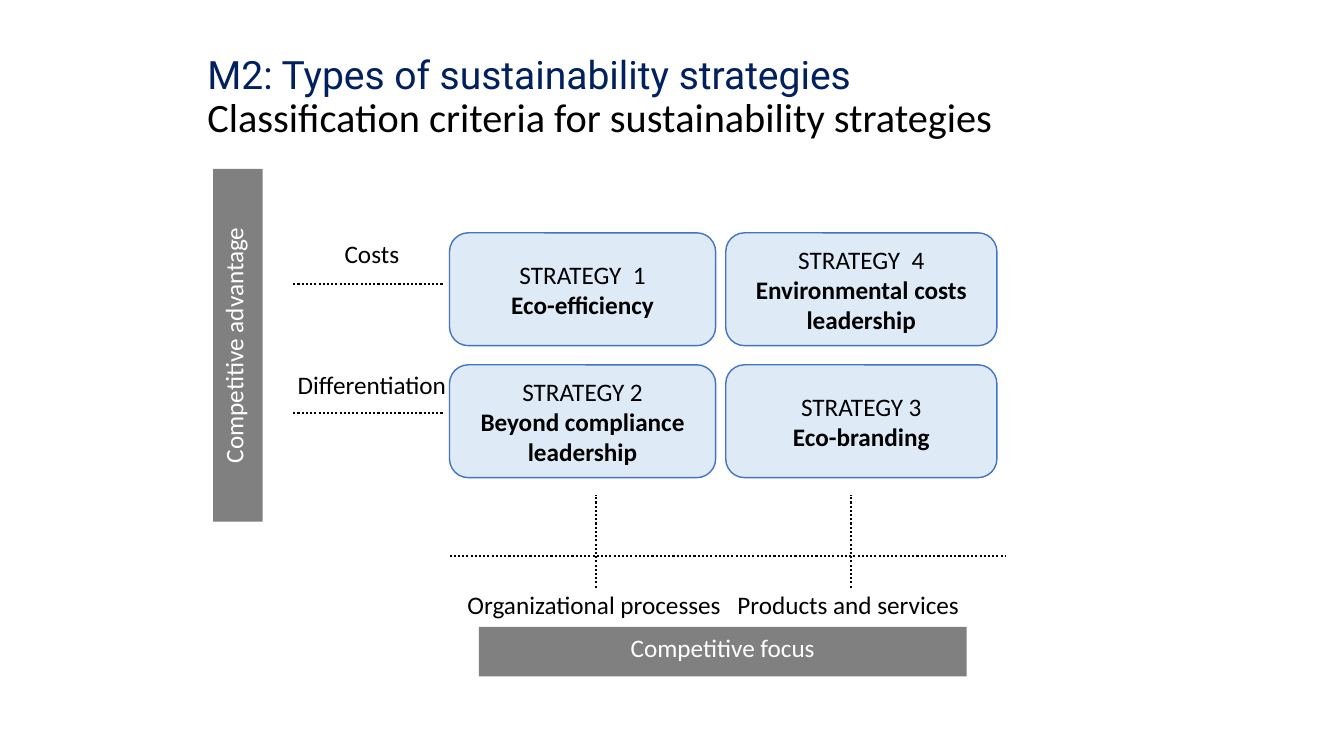
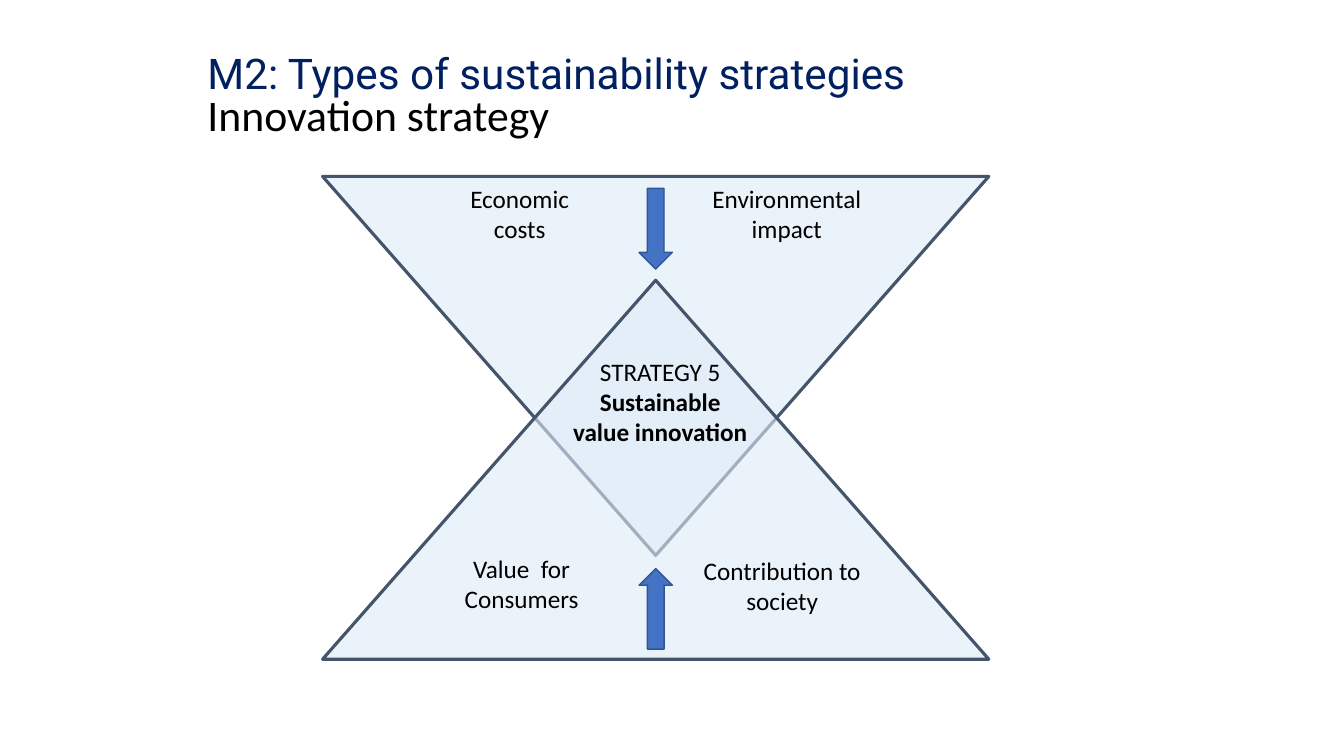
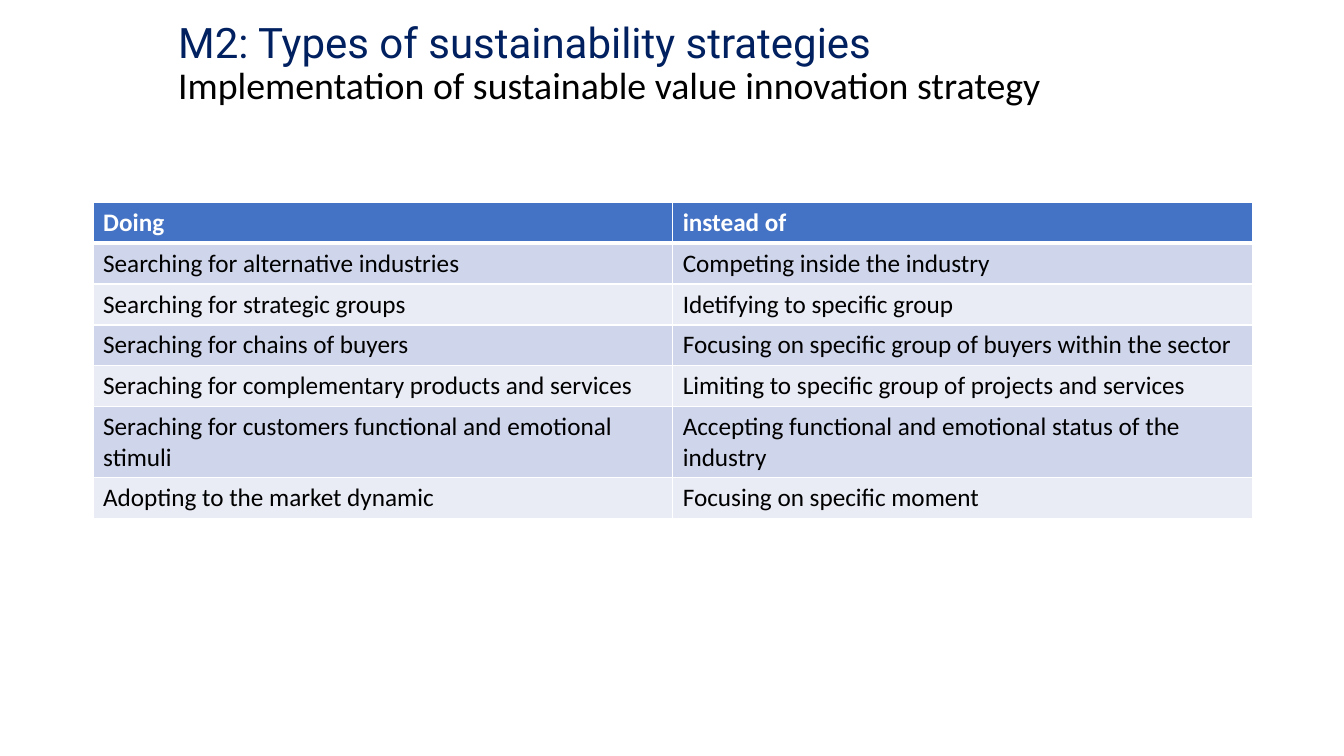
from dataclasses import dataclass
from typing import Sequence

from lxml import etree
from pptx import Presentation
from pptx.dml.color import RGBColor
from pptx.enum.dml import MSO_LINE
from pptx.enum.shapes import MSO_CONNECTOR, MSO_SHAPE
from pptx.enum.text import MSO_ANCHOR, PP_ALIGN
from pptx.oxml.ns import qn
from pptx.util import Pt

ROUNDED, RECTANGLE = MSO_SHAPE.ROUNDED_RECTANGLE, MSO_SHAPE.RECTANGLE
TRIANGLE, DOWN_ARROW = MSO_SHAPE.ISOSCELES_TRIANGLE, MSO_SHAPE.DOWN_ARROW
STRAIGHT, DOTTED = MSO_CONNECTOR.STRAIGHT, MSO_LINE.ROUND_DOT
LEFT, CENTER = PP_ALIGN.LEFT, PP_ALIGN.CENTER
TOP, MIDDLE = MSO_ANCHOR.TOP, MSO_ANCHOR.MIDDLE

BLACK = RGBColor(0x00, 0x00, 0x00)
WHITE = RGBColor(0xFF, 0xFF, 0xFF)
NAVY = RGBColor(0x00, 0x20, 0x60)
SLATE = RGBColor(0x44, 0x54, 0x6A)
GRAY = RGBColor(0x80, 0x80, 0x80)
BLUE = RGBColor(0x44, 0x72, 0xC4)
DARK_BLUE = RGBColor(0x32, 0x54, 0x91)
PALE_BLUE = RGBColor(0xDE, 0xEB, 0xF7)
BANDS = (RGBColor(0xE9, 0xEB, 0xF5), RGBColor(0xCF, 0xD5, 0xEA))

BODY_FONT, TITLE_FONT = "Calibri", "Roboto"
BODY_SIZE = 18
WIDE_MARGINS = (7.2, 3.6)
TIGHT_MARGINS = (1.44, 0.72)
MODULE_TITLE = "M2: Types of sustainability strategies"


@dataclass(frozen=True)
class Box:
    """A rectangle in points."""
    left: float
    top: float
    width: float
    height: float

    def lengths(self) -> tuple:
        return Pt(self.left), Pt(self.top), Pt(self.width), Pt(self.height)


@dataclass(frozen=True)
class Title:
    subtitle: str
    box: Box
    size: float
    subtitle_size: float
    spacing: float = 0.9


@dataclass(frozen=True)
class Label:
    lines: Sequence[str]
    box: Box
    anchor: MSO_ANCHOR = TOP


@dataclass(frozen=True)
class Strategy:
    heading: str
    name: str
    column: int
    row: int


TITLE_BOX = Box(141.1, 35.3, 780.5, 69.8)
TITLES = (
    Title("Classification criteria for sustainability strategies", TITLE_BOX, 27.9, 28.8),
    Title("Innovation strategy", TITLE_BOX, 30.2, 31.2, 0.8),
    Title("Implementation of sustainable value innovation strategy",
          Box(120.2, 1.4, 680.4, 90), 30, 27),
)

STRATEGY_COLUMNS = ((321.1, 190.1), (518.4, 193.7))
STRATEGY_TOP, STRATEGY_HEIGHT, STRATEGY_PITCH = 166.3, 80.6, 94.3
STRATEGIES = (
    Strategy("STRATEGY  1", "Eco-efficiency", 0, 0),
    Strategy("STRATEGY 2", "Beyond compliance leadership", 0, 1),
    Strategy("STRATEGY 3", "Eco-branding", 1, 1),
    Strategy("STRATEGY  4", "Environmental costs leadership", 1, 0),
)
DOTTED_LINES = (
    (209.5, 203, 316.8, 203),
    (209.5, 295.2, 317.5, 295.2),
    (321.1, 397.4, 718.6, 397.4),
    (607.7, 419.8, 607.7, 353.5),
    (425.5, 419.8, 425.5, 353.5),
)
AXIS_LABELS = (
    Label(["Costs"], Box(173.5, 167, 184.3, 36)),
    Label(["Differentiation"], Box(173.5, 260, 184.3, 36)),
    Label(["Organizational processes"], Box(318.2, 414, 212.4, 36), MIDDLE),
    Label(["Products and services"], Box(499.7, 414, 212.4, 36), MIDDLE),
)
VALUE_LABELS = (
    Label(["Economic costs"], Box(312.5, 127.4, 117.4, 64)),
    Label(["Value  for Consumers"], Box(313.9, 391.7, 117.4, 64)),
    Label(["Contribution to society"], Box(488.9, 393.1, 139.7, 64)),
    Label(["Environmental impact"], Box(495.4, 127.4, 133.2, 64)),
    Label(["STRATEGY 5", "Sustainable value innovation"], Box(399.6, 250.6, 144, 99.4)),
)
TABLE_BOX = Box(66.5, 144.5, 828, 204.4)
TABLE_ROWS = (
    ("Doing", "instead of"),
    ("Searching for alternative industries", "Competing inside the industry"),
    ("Searching for strategic groups", "Idetifying to specific group"),
    ("Seraching for chains of buyers", "Focusing on specific group of buyers within the sector"),
    ("Seraching for complementary products and services",
     "Limiting to specific group of projects and services"),
    ("Seraching for customers functional and emotional stimuli",
     "Accepting functional and emotional status of the industry"),
    ("Adopting to the market dynamic", "Focusing on specific moment"),
)


def add_run(paragraph, text: str, *, font: str = BODY_FONT, size: float = BODY_SIZE,
            color: RGBColor = BLACK, bold: bool = False) -> None:
    run = paragraph.add_run()
    run.text = text
    run.font.name = font
    run.font.size = Pt(size)
    run.font.color.rgb = color
    run.font.bold = bold


def set_frame(text_frame, *, anchor: MSO_ANCHOR = TOP, margins: tuple = WIDE_MARGINS) -> None:
    text_frame.word_wrap = True
    text_frame.vertical_anchor = anchor
    text_frame.margin_left = text_frame.margin_right = Pt(margins[0])
    text_frame.margin_top = text_frame.margin_bottom = Pt(margins[1])


def write_lines(text_frame, lines: Sequence[str], *, color: RGBColor = BLACK,
                anchor: MSO_ANCHOR = TOP, margins: tuple = WIDE_MARGINS) -> None:
    """Write centred paragraphs; those after the first are bold."""
    set_frame(text_frame, anchor=anchor, margins=margins)
    for index, line in enumerate(lines):
        paragraph = text_frame.add_paragraph() if index else text_frame.paragraphs[0]
        paragraph.alignment = CENTER
        add_run(paragraph, line, color=color, bold=index > 0)


def add_filled_shape(slide, kind: MSO_SHAPE, box: Box, fill: RGBColor, *,
                     line: RGBColor | None = None, line_width: float = 1,
                     rotation: float = 0, opacity: int = 100):
    shape = slide.shapes.add_shape(kind, *box.lengths())
    shape.shadow.inherit = False
    shape.rotation = rotation
    shape.fill.solid()
    shape.fill.fore_color.rgb = fill
    if opacity < 100:
        color = shape.element.spPr.find(qn("a:solidFill")).find(qn("a:srgbClr"))
        etree.SubElement(color, qn("a:alpha"), val=str(opacity * 1000))
    if line is None:
        shape.line.fill.background()
    else:
        shape.line.color.rgb = line
        shape.line.width = Pt(line_width)
    return shape


def add_dotted_line(slide, *ends: float) -> None:
    connector = slide.shapes.add_connector(STRAIGHT, *map(Pt, ends))
    connector.line.color.rgb = BLACK
    connector.line.width = Pt(1.5)
    connector.line.dash_style = DOTTED
    etree.SubElement(connector.element.spPr, qn("a:effectLst"))


def add_label(slide, label: Label) -> None:
    text_box = slide.shapes.add_textbox(*label.box.lengths())
    margins = TIGHT_MARGINS if label.anchor == MIDDLE else WIDE_MARGINS
    write_lines(text_box.text_frame, label.lines, anchor=label.anchor, margins=margins)


def add_titled_slide(presentation, title: Title):
    slide = presentation.slides.add_slide(presentation.slide_layouts[6])
    text_frame = slide.shapes.add_textbox(*title.box.lengths()).text_frame
    set_frame(text_frame, anchor=MIDDLE)
    paragraph = text_frame.paragraphs[0]
    paragraph.alignment = LEFT
    paragraph.line_spacing = title.spacing
    add_run(paragraph, MODULE_TITLE, font=TITLE_FONT, size=title.size, color=NAVY)
    paragraph.add_line_break()
    add_run(paragraph, title.subtitle, size=title.subtitle_size)
    return slide


def draw_classification(slide) -> None:
    for strategy in STRATEGIES:
        left, width = STRATEGY_COLUMNS[strategy.column]
        top = STRATEGY_TOP + strategy.row * STRATEGY_PITCH
        shape = add_filled_shape(slide, ROUNDED, Box(left, top, width, STRATEGY_HEIGHT),
                                 PALE_BLUE, line=BLUE)
        write_lines(shape.text_frame, [strategy.heading, strategy.name],
                    anchor=MIDDLE, margins=TIGHT_MARGINS)
    for text, box, rotation in (
        ("Competitive focus", Box(342, 447.8, 348.5, 35.3), 0),
        ("Competitive advantage", Box(43.9, 229, 252, 35.3), 270),
    ):
        bar = add_filled_shape(slide, RECTANGLE, box, GRAY, rotation=rotation)
        write_lines(bar.text_frame, [text], color=WHITE)
    for ends in DOTTED_LINES:
        add_dotted_line(slide, *ends)
    for label in AXIS_LABELS:
        add_label(slide, label)


def draw_innovation(slide) -> None:
    for top, rotation in ((126, 180), (200.2, 0)):
        add_filled_shape(slide, TRIANGLE, Box(230.4, top, 475.9, 270.7), PALE_BLUE,
                         line=SLATE, line_width=2.25, rotation=rotation, opacity=60)
    for label in VALUE_LABELS:
        add_label(slide, label)
    for top, rotation in ((406.1, 180), (134.6, 0)):
        add_filled_shape(slide, DOWN_ARROW, Box(456.5, top, 23.8, 57.6), BLUE,
                         line=DARK_BLUE, rotation=rotation)


def add_cell_borders(cell, *, top: float, bottom: float) -> None:
    properties = cell._tc.get_or_add_tcPr()
    for side, width in (("L", 1), ("R", 1), ("T", top), ("B", bottom)):
        line = etree.SubElement(properties, qn(f"a:ln{side}"), w=str(Pt(width)))
        fill = etree.SubElement(line, qn("a:solidFill"))
        etree.SubElement(fill, qn("a:srgbClr"), val=str(WHITE))


def draw_implementation(slide) -> None:
    table = slide.shapes.add_table(len(TABLE_ROWS), 2, *TABLE_BOX.lengths()).table
    for row_index, texts in enumerate(TABLE_ROWS):
        is_header = row_index == 0
        table.rows[row_index].height = Pt(TABLE_BOX.height / len(TABLE_ROWS))
        for column_index, text in enumerate(texts):
            cell = table.cell(row_index, column_index)
            add_cell_borders(cell, top=3 if row_index == 1 else 1, bottom=3 if is_header else 1)
            cell.fill.solid()
            cell.fill.fore_color.rgb = BLUE if is_header else BANDS[row_index % 2]
            add_run(cell.text_frame.paragraphs[0], text,
                    color=WHITE if is_header else BLACK, bold=is_header)


def main() -> None:
    presentation = Presentation()
    presentation.slide_width, presentation.slide_height = Pt(960), Pt(540)
    drawings = (draw_classification, draw_innovation, draw_implementation)
    for title, draw in zip(TITLES, drawings):
        draw(add_titled_slide(presentation, title))
    presentation.save("out.pptx")


if __name__ == "__main__":
    main()
